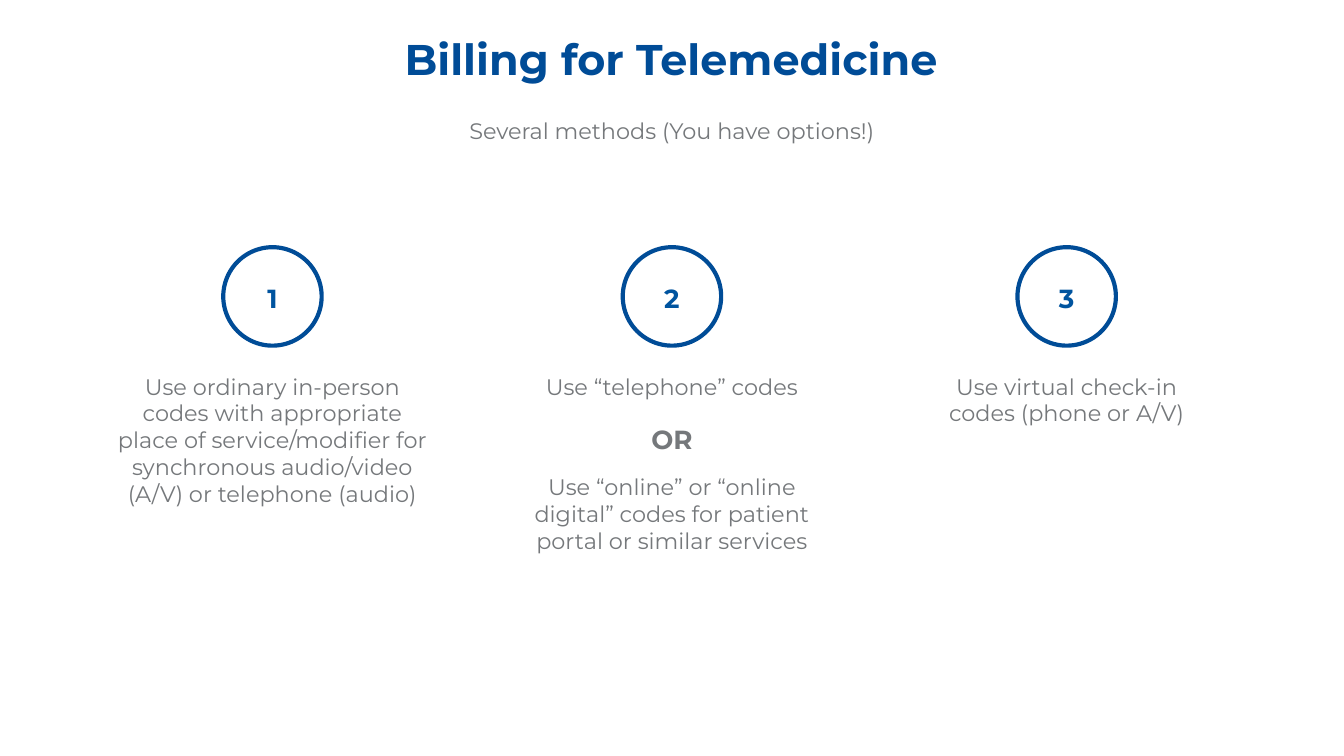
from dataclasses import dataclass

from pptx import Presentation
from pptx import util as u
from pptx.dml.color import RGBColor
from pptx.enum import shapes, text


@dataclass(frozen=True)
class Theme:
    font: str = "Montserrat"
    blue: str = "004C97"
    number_blue: str = "00549F"
    gray: str = "75787B"
    white: str = "FFFFFF"
    title_size: float = 23
    label_size: float = 14
    body_size: float = 12


THEME = Theme()


def write_text(shape, content, *, size=THEME.body_size, color=THEME.gray, bold=False,
               inset=0, anchor=text.MSO_ANCHOR.TOP, line_spacing=None):
    """Put one centred paragraph into a shape."""
    frame = shape.text_frame
    frame.word_wrap = True
    frame.auto_size = text.MSO_AUTO_SIZE.NONE
    frame.vertical_anchor = anchor
    frame.margin_left = frame.margin_right = u.Cm(inset)
    frame.margin_top = frame.margin_bottom = u.Cm(inset)
    paragraph = frame.paragraphs[0]
    paragraph.alignment = text.PP_ALIGN.CENTER
    if line_spacing:
        paragraph.line_spacing = line_spacing
    run = paragraph.add_run()
    run.text = content
    run.font.name = THEME.font
    run.font.size = u.Pt(size)
    run.font.bold = bold
    run.font.color.rgb = RGBColor.from_string(color)


class SlideBuilder:
    """Holds the theme and the current slide."""

    def __init__(self, slide, theme):
        self.slide = slide
        self.theme = theme

    def title(self, content, left, top, width, height):
        title = self.slide.shapes.title
        title.left, title.top = u.Cm(left), u.Cm(top)
        title.width, title.height = u.Cm(width), u.Cm(height)
        write_text(title, content, size=self.theme.title_size, color=self.theme.blue,
                   bold=True, inset=0.1, anchor=text.MSO_ANCHOR.MIDDLE, line_spacing=0.9)

    def text_box(self, content, center, top, width, height, **style):
        box = self.slide.shapes.add_textbox(
            u.Cm(center - width / 2), u.Cm(top), u.Cm(width), u.Cm(height))
        write_text(box, content, **style)

    def label(self, content, center, top, color):
        self.text_box(content, center, top, CIRCLE_SIZE, 0.89, color=color,
                      size=self.theme.label_size, bold=True, inset=0.15)

    def circle(self, center, top, size):
        circle = self.slide.shapes.add_shape(
            shapes.MSO_SHAPE.OVAL, u.Cm(center - size / 2), u.Cm(top), u.Cm(size), u.Cm(size))
        circle.shadow.inherit = False
        circle.fill.solid()
        circle.fill.fore_color.rgb = RGBColor.from_string(self.theme.white)
        circle.line.color.rgb = RGBColor.from_string(self.theme.blue)
        circle.line.width = u.Pt(2.25)


SLIDE_WIDTH, SLIDE_HEIGHT = 25.4, 14.28
MIDDLE = SLIDE_WIDTH / 2
CIRCLE_SIZE = 1.86
CIRCLE_TOP = 4.67
NUMBER_TOP = 5.18
METHOD_TOP = 7.04

# Column centre, text width, text height, wording
METHODS = [
    (5.15, 5.92, 1.24, "Use ordinary in-person codes with appropriate place of "
                       "service/modifier for synchronous audio/video (A/V) or telephone (audio)"),
    (MIDDLE, 5.92, 1.24, "Use “telephone” codes"),
    (20.16, 5.49, 2.03, "Use virtual check-in codes (phone or A/V)"),
]


def main():
    presentation = Presentation()
    presentation.slide_width = u.Cm(SLIDE_WIDTH)
    presentation.slide_height = u.Cm(SLIDE_HEIGHT)
    title_only = presentation.slide_layouts[5]
    builder = SlideBuilder(presentation.slides.add_slide(title_only), THEME)

    # Heading
    builder.title("Billing for Telemedicine", 0.03, 0, 25.32, 2.34)
    builder.text_box("Several methods (You have options!)", MIDDLE, 2.03,
                     SLIDE_WIDTH, 0.89, inset=0.18)

    # Numbered methods
    for number, (center, width, height, wording) in enumerate(METHODS, start=1):
        builder.circle(center, CIRCLE_TOP, CIRCLE_SIZE)
        builder.label(str(number), center, NUMBER_TOP, THEME.number_blue)
        builder.text_box(wording, center, METHOD_TOP, width, height)

    # Alternative within the second method
    builder.label("OR", MIDDLE, 7.85, THEME.gray)
    builder.text_box("Use “online” or “online digital” codes for patient portal "
                     "or similar services", MIDDLE, 8.94, 5.92, 1.7)

    presentation.save("out.pptx")


if __name__ == "__main__":
    main()
